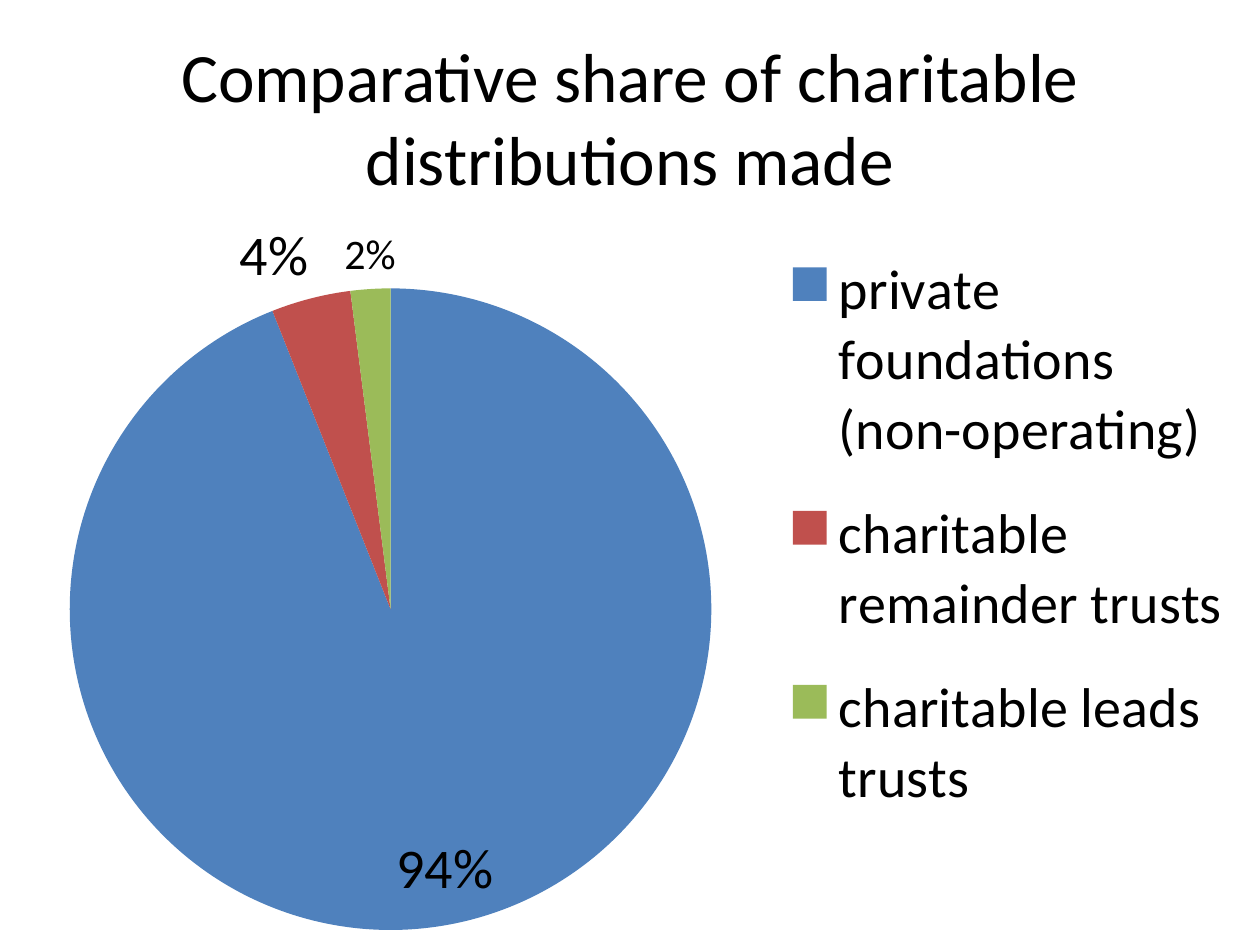
"""Build a slide with a pie chart of charitable distributions by kind of giver."""
from lxml import etree
from pptx import Presentation
from pptx.chart.data import CategoryChartData
from pptx.dml.color import RGBColor
from pptx.enum.chart import XL_CHART_TYPE, XL_LABEL_POSITION, XL_LEGEND_POSITION
from pptx.enum.text import MSO_ANCHOR, PP_ALIGN
from pptx.oxml.ns import qn
from pptx.util import Cm, Pt

PIE = XL_CHART_TYPE.PIE
RIGHT = XL_LEGEND_POSITION.RIGHT
BEST_FIT = XL_LABEL_POSITION.BEST_FIT
MIDDLE = MSO_ANCHOR.MIDDLE
CENTER = PP_ALIGN.CENTER

BLACK = RGBColor(0x00, 0x00, 0x00)
BLUE = RGBColor(0x4F, 0x81, 0xBD)
RED = RGBColor(0xC0, 0x50, 0x4D)
GREEN = RGBColor(0x9B, 0xBB, 0x59)

TITLE = "Comparative share of charitable distributions made"
SHARES = [
    ("private foundations (non-operating)", 94, BLUE, 32),
    ("charitable remainder trusts", 4, RED, 32),
    ("charitable leads trusts", 2, GREEN, 24),
]
TITLE_BOX = {"left": Cm(0), "top": Cm(0.76), "width": Cm(25.4), "height": Cm(3.18)}
CHART_BOX = (Cm(0), Cm(4.01), Cm(25.4), Cm(15.04))
PIE_AREA = {"x": 0.05, "y": 0.12, "w": 0.52, "h": 0.86}
LEGEND_AREA = {"x": 0.62, "y": 0.03, "w": 0.36, "h": 0.84}


def set_values(target, values):
    for name, value in values.items():
        setattr(target, name, value)


def set_font(font, size):
    set_values(font, {"name": "Calibri", "size": Pt(size)})
    font.color.rgb = BLACK


def place(element, area, inner=False):
    """Give a chart part a fixed place, in fractions of the chart."""
    for old in element.findall(qn("c:layout")):
        element.remove(old)
    layout = etree.Element(qn("c:layout"))
    manual = etree.SubElement(layout, qn("c:manualLayout"))
    settings = {"layoutTarget": "inner"} if inner else {}
    settings.update(xMode="edge", yMode="edge", **area)
    for name, value in settings.items():
        etree.SubElement(manual, qn(f"c:{name}")).set("val", str(value))
    before = element.find(qn("c:legendPos"))
    element.insert(0 if before is None else element.index(before) + 1, layout)


def add_title(slide):
    title = slide.shapes.title
    set_values(title, TITLE_BOX)
    frame = title.text_frame
    set_values(frame, {"text": TITLE, "vertical_anchor": MIDDLE, "word_wrap": True})
    para = frame.paragraphs[0]
    para.alignment = CENTER
    set_font(para.runs[0].font, 39.6)


def add_pie(slide):
    data = CategoryChartData()
    data.categories = [share[0] for share in SHARES]
    data.add_series("Series 1", [share[1] for share in SHARES])
    chart = slide.shapes.add_chart(PIE, *CHART_BOX, data).chart
    set_values(chart, {"has_title": False, "has_legend": True})
    set_font(chart.font, 32)
    set_values(chart.legend, {"position": RIGHT, "include_in_layout": False})
    set_font(chart.legend.font, 32)

    plot = chart.plots[0]
    plot.vary_by_categories = True
    series = plot.series[0]
    set_values(series.data_labels, {
        "show_percentage": True, "show_value": False,
        "number_format": "0%", "number_format_is_linked": False,
    })
    for index, (_, _, color, size) in enumerate(SHARES):
        point = series.points[index]
        point.format.fill.solid()
        point.format.fill.fore_color.rgb = color
        set_font(point.data_label.font, size)
        point.data_label.position = BEST_FIT
    for label in series.data_labels._element.findall(qn("c:dLbl")):
        label.find(qn("c:showVal")).set("val", "0")
        label.find(qn("c:showPercent")).set("val", "1")

    place(chart._chartSpace.find(".//" + qn("c:plotArea")), PIE_AREA, inner=True)
    place(chart._chartSpace.find(".//" + qn("c:legend")), LEGEND_AREA)


def main():
    deck = Presentation()
    set_values(deck, {"slide_width": Cm(25.4), "slide_height": Cm(19.05)})
    slide = deck.slides.add_slide(deck.slide_layouts[5])
    add_title(slide)
    add_pie(slide)
    deck.save("out.pptx")


if __name__ == "__main__":
    main()
